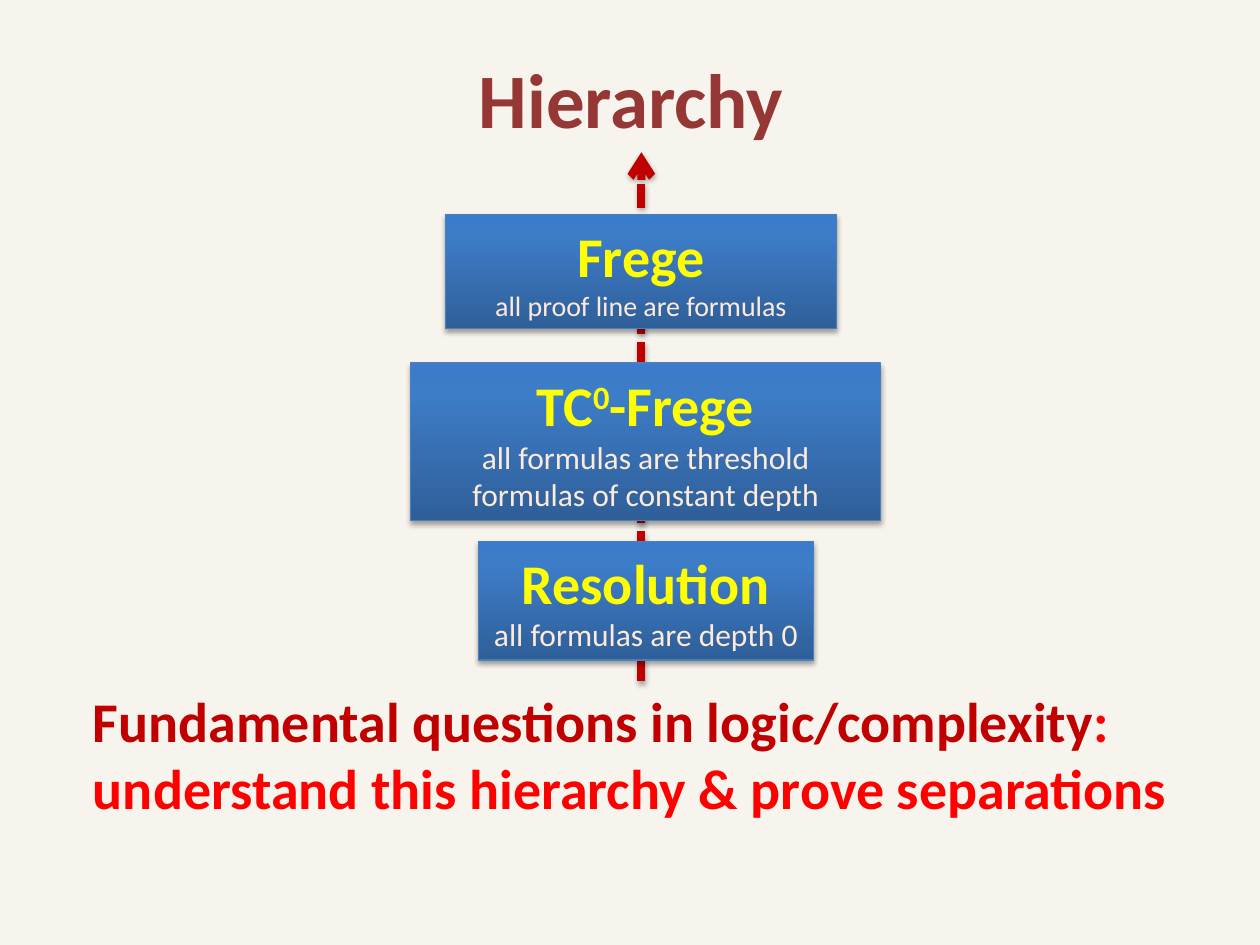
from copy import deepcopy
from dataclasses import dataclass

from lxml import etree
from pptx import Presentation
from pptx.dml.color import RGBColor
from pptx.enum.dml import MSO_LINE
from pptx.enum.shapes import MSO_CONNECTOR, MSO_SHAPE
from pptx.enum.text import MSO_ANCHOR, PP_ALIGN
from pptx.oxml.ns import qn
from pptx.slide import Slide
from pptx.text.text import Font, TextFrame
from pptx.util import Pt

RECTANGLE = MSO_SHAPE.RECTANGLE
STRAIGHT = MSO_CONNECTOR.STRAIGHT
SQUARE_DOT = MSO_LINE.SQUARE_DOT
CENTER, LEFT = PP_ALIGN.CENTER, PP_ALIGN.LEFT
TOP, MIDDLE = MSO_ANCHOR.TOP, MSO_ANCHOR.MIDDLE


@dataclass(frozen=True)
class Theme:
    font: str = "Calibri"
    background: str = "F7F4ED"
    title: str = "953735"
    arrow: str = "C00000"
    question: str = "C00000"
    answer: str = "FF0000"
    system: str = "FFFF00"
    description: str = "FDEADA"
    outline: str = "4B7EBC"
    gradient: tuple = ((0, "2F5F99"), (0.8, "3D7CC7"), (1, "3A7CCB"))
    title_size: float = 44
    heading_size: float = 32


THEME = Theme()


@dataclass(frozen=True)
class Box:
    left: float
    top: float
    width: float
    height: float


@dataclass(frozen=True)
class Run:
    text: str
    color: str
    superscript: bool = False


@dataclass(frozen=True)
class ProofSystem:
    box: Box
    name: tuple[Run, ...]
    description: str
    description_size: float


SYSTEMS = (
    ProofSystem(Box(254.5, 122.4, 223.5, 65.5), (Run("Frege", THEME.system),),
                "all proof line are formulas", 16),
    ProofSystem(Box(234.5, 207.4, 268.8, 90),
                (Run("TC", THEME.system), Run("0", THEME.system, True),
                 Run("-Frege", THEME.system)),
                "all formulas are threshold formulas of constant depth", 18),
    ProofSystem(Box(273.3, 309.4, 191.6, 67.8), (Run("Resolution", THEME.system),),
                "all formulas are depth 0", 18),
)


def style_font(font: Font, size: float, bold: bool) -> None:
    font.name, font.size, font.bold = THEME.font, Pt(size), bold


def fill_paragraph(paragraph, runs: tuple[Run, ...], size: float,
                   bold: bool = True, alignment: PP_ALIGN = CENTER) -> None:
    paragraph.alignment = alignment
    style_font(paragraph.font, size, bold)
    for item in runs:
        run = paragraph.add_run()
        run.text = item.text
        run.font.color.rgb = RGBColor.from_string(item.color)
        if item.superscript:
            run.font._element.set("baseline", "30000")


def prepare_frame(frame: TextFrame, anchor: MSO_ANCHOR) -> None:
    frame.word_wrap = True
    frame.vertical_anchor = anchor


def add_shadow(properties) -> None:
    """Put a soft shadow below the shape that owns these properties."""
    effects = properties.find(qn("a:effectLst"))
    if effects is None:
        effects = etree.SubElement(properties, qn("a:effectLst"))
    shadow = etree.SubElement(effects, qn("a:outerShdw"), blurRad=str(Pt(3.1)),
                              dist=str(Pt(1.8)), dir="5400000", rotWithShape="0")
    color = etree.SubElement(shadow, qn("a:srgbClr"), val="000000")
    etree.SubElement(color, qn("a:alpha"), val="35000")


def add_text(slide: Slide, box: Box, runs: tuple[Run, ...], size: float,
             alignment: PP_ALIGN) -> None:
    shape = slide.shapes.add_textbox(Pt(box.left), Pt(box.top), Pt(box.width), Pt(box.height))
    prepare_frame(shape.text_frame, TOP)
    fill_paragraph(shape.text_frame.paragraphs[0], runs, size, alignment=alignment)


def add_hierarchy_arrow(slide: Slide, x: float, bottom: float, top: float) -> None:
    arrow = slide.shapes.add_connector(STRAIGHT, Pt(x), Pt(bottom), Pt(x), Pt(top))
    arrow.line.color.rgb = RGBColor.from_string(THEME.arrow)
    arrow.line.width = Pt(4.5)
    arrow.line.dash_style = SQUARE_DOT
    properties = arrow._element.spPr
    etree.SubElement(properties.find(qn("a:ln")), qn("a:tailEnd"), type="arrow")
    add_shadow(properties)


def fill_gradient(shape) -> None:
    """Run the theme's colour stops from the bottom edge to the top."""
    shape.fill.gradient()
    shape.fill.gradient_angle = 90
    stop_list = shape._element.spPr.find(".//" + qn("a:gsLst"))
    stop_list.append(deepcopy(stop_list[-1]))
    for stop, (position, color) in zip(shape.fill.gradient_stops, THEME.gradient):
        stop.position = position
        stop.color.rgb = RGBColor.from_string(color)


def add_proof_system(slide: Slide, system: ProofSystem) -> None:
    box = system.box
    shape = slide.shapes.add_shape(RECTANGLE, Pt(box.left), Pt(box.top),
                                   Pt(box.width), Pt(box.height))
    fill_gradient(shape)
    shape.line.color.rgb = RGBColor.from_string(THEME.outline)
    shape.line.width = Pt(0.75)
    shape.shadow.inherit = False
    add_shadow(shape._element.spPr)
    frame = shape.text_frame
    prepare_frame(frame, MIDDLE)
    fill_paragraph(frame.paragraphs[0], system.name, THEME.heading_size)
    fill_paragraph(frame.add_paragraph(), (Run(system.description, THEME.description),),
                   system.description_size, bold=False)


def main() -> None:
    presentation = Presentation()
    presentation.slide_width, presentation.slide_height = Pt(720), Pt(540)
    slide = presentation.slides.add_slide(presentation.slide_layouts[6])
    slide.background.fill.solid()
    slide.background.fill.fore_color.rgb = RGBColor.from_string(THEME.background)

    add_hierarchy_arrow(slide, 366.5, 389, 87)
    add_text(slide, Box(46, 388.8, 646.6, 85.4),
             (Run("Fundamental questions in logic/complexity", THEME.question),
              Run(": understand this hierarchy & prove separations", THEME.answer)),
             THEME.heading_size, LEFT)
    add_text(slide, Box(40, 26, 641.4, 60.6), (Run("Hierarchy", THEME.title),),
             THEME.title_size, CENTER)
    for system in SYSTEMS:
        add_proof_system(slide, system)

    presentation.save("out.pptx")


if __name__ == "__main__":
    main()
